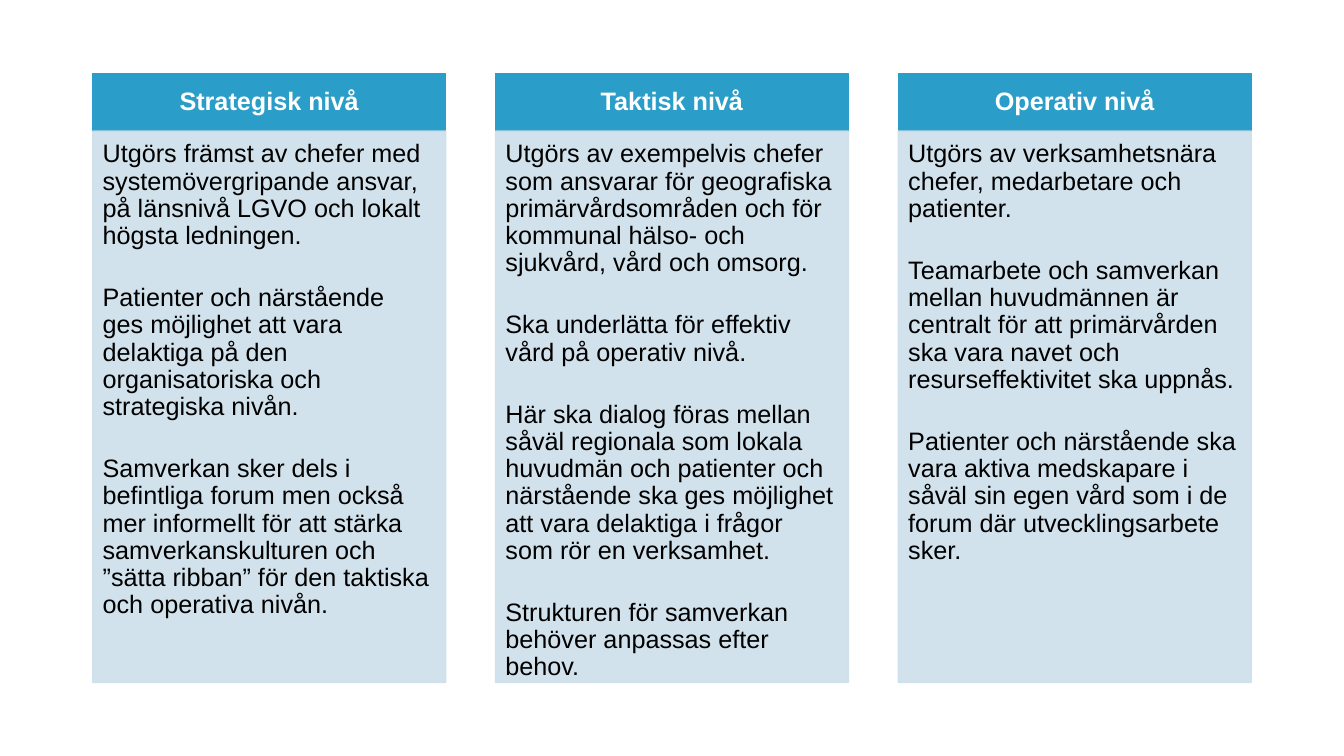
from lxml import etree
from pptx import Presentation
from pptx import util as u
from pptx.dml.color import RGBColor
from pptx.enum import shapes, text
from pptx.oxml.ns import qn

HEADER, BODY, WHITE, BLACK = "2A9EC8", "CDDFEB", "FFFFFF", "000000"
HEADER_HEIGHT = 0.57
COLUMN_WIDTH = 3.5

LEVELS = [
    ("Strategisk nivå", [
        "Utgörs främst av chefer med systemövergripande ansvar, på länsnivå LGVO och lokalt högsta ledningen.",
        "Patienter och närstående ges möjlighet att vara delaktiga på den organisatoriska och strategiska nivån.",
        "Samverkan sker dels i befintliga forum men också mer informellt för att stärka samverkanskulturen "
        "och ”sätta ribban” för den taktiska och operativa nivån.",
    ]),
    ("Taktisk nivå", [
        "Utgörs av exempelvis chefer som ansvarar för geografiska primärvårdsområden och för kommunal "
        "hälso- och sjukvård, vård och omsorg.",
        "Ska underlätta för effektiv vård på operativ nivå.",
        "Här ska dialog föras mellan såväl regionala som lokala huvudmän och patienter och närstående "
        "ska ges möjlighet att vara delaktiga i frågor som rör en verksamhet.",
        "Strukturen för samverkan behöver anpassas efter behov.",
    ]),
    ("Operativ nivå", [
        "Utgörs av verksamhetsnära chefer, medarbetare och patienter.",
        "Teamarbete och samverkan mellan huvudmännen är centralt för att primärvården ska vara navet "
        "och resurseffektivitet ska uppnås.",
        "Patienter och närstående ska vara aktiva medskapare i såväl sin egen vård som i de forum "
        "där utvecklingsarbete sker.",
    ]),
]


def color(value):
    """Turn a hex string into a colour."""
    return RGBColor.from_string(value)


def add_panel(page, box, fill, opacity=100):
    """Add a filled rectangle with a matching outline."""
    panel = page.shapes.add_shape(shapes.MSO_SHAPE.RECTANGLE, *map(u.Inches, box))
    panel.shadow.inherit = False
    panel.fill.solid()
    panel.fill.fore_color.rgb = color(fill)
    panel.line.color.rgb = color(fill)
    panel.line.width = u.Pt(1)
    if opacity < 100:
        for tone in panel._element.spPr.iter(qn("a:srgbClr")):
            etree.SubElement(tone, qn("a:alpha"), val=str(opacity * 1000))
    return panel


def write(panel, lines, insets, anchor, align, ink, bold=False, gap=0):
    """Write paragraphs into a panel."""
    frame = panel.text_frame
    frame.word_wrap = True
    frame.vertical_anchor = anchor
    frame.margin_left, frame.margin_top, frame.margin_right, frame.margin_bottom = map(u.Inches, insets)
    for index, line in enumerate(lines):
        para = frame.add_paragraph() if index else frame.paragraphs[0]
        para.text = line
        para.alignment = align
        para.line_spacing = 0.9
        para.space_after = u.Pt(gap)
        para.font.name = "Arial"
        para.font.size = u.Pt(18)
        para.font.bold = bold
        para.font.color.rgb = color(ink)


def add_level(page, box, title, lines):
    """Draw one level: a header above its description."""
    left, top, width, height = box
    header = add_panel(page, (left, top, width, HEADER_HEIGHT), HEADER)
    write(header, [title], (0.14, 0.08, 0.14, 0.08), text.MSO_ANCHOR.MIDDLE,
          text.PP_ALIGN.CENTER, WHITE, bold=True)
    body = add_panel(page, (left, top + HEADER_HEIGHT, width, height - HEADER_HEIGHT), BODY, 90)
    write(body, lines, (0.1, 0.1, 0.14, 0.16), text.MSO_ANCHOR.TOP,
          text.PP_ALIGN.LEFT, BLACK, gap=24.9)


def add_levels(page, box):
    """Spread the levels evenly across the box."""
    left, top, width, height = box
    step = (width - COLUMN_WIDTH) / (len(LEVELS) - 1)
    for index, (title, lines) in enumerate(LEVELS):
        add_level(page, (left + index * step, top, COLUMN_WIDTH, height), title, lines)


def main():
    """Build and save the deck."""
    deck = Presentation()
    deck.slide_width, deck.slide_height = u.Inches(13.33), u.Inches(7.5)
    page = deck.slides.add_slide(deck.slide_layouts[6])
    add_levels(page, (0.92, 0.73, 11.49, 6.04))
    deck.save("out.pptx")


if __name__ == "__main__":
    main()
